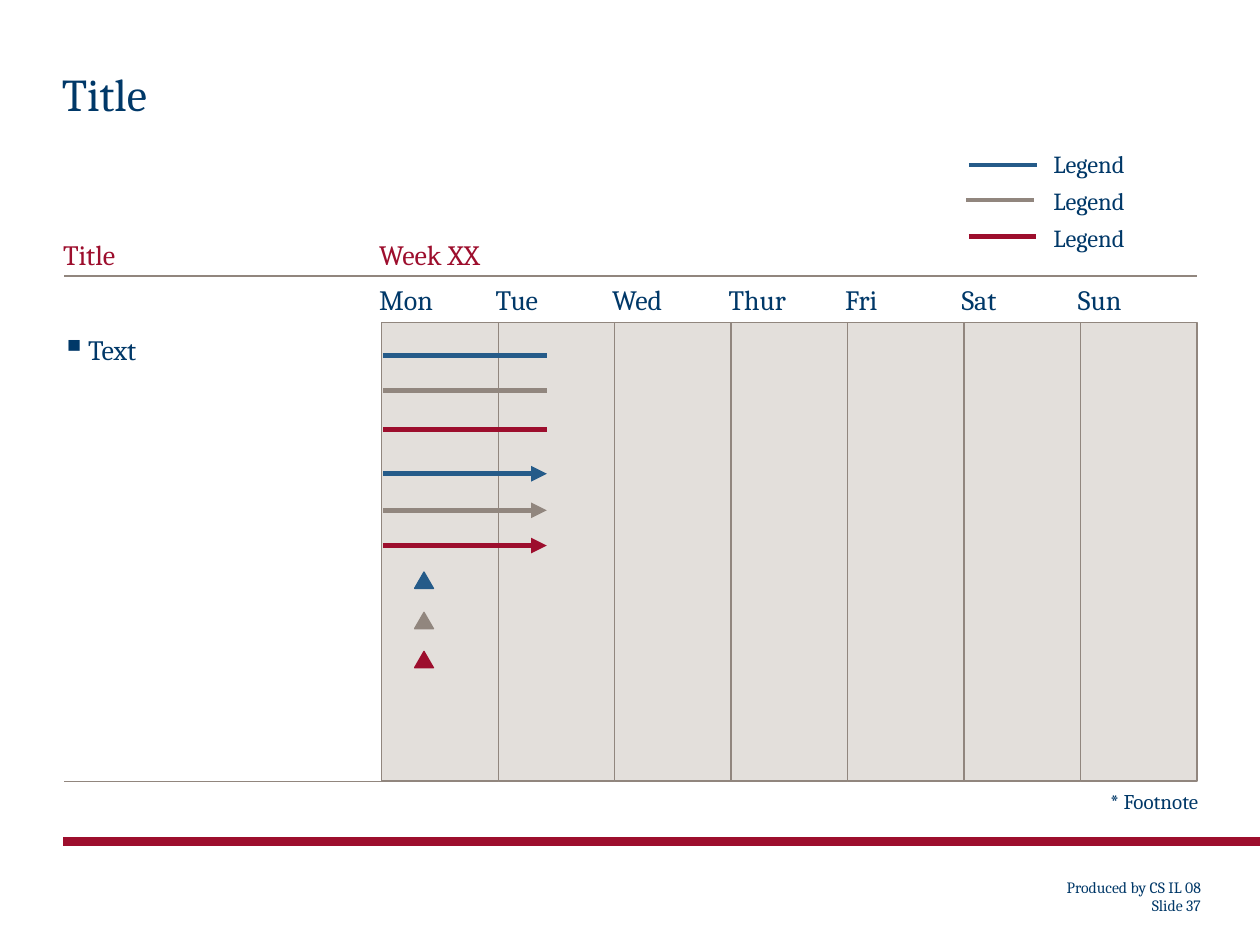
"""Build a weekly schedule slide with a legend, day columns and sample markers."""
from dataclasses import dataclass, field
from typing import Any

from lxml.etree import SubElement
from pptx import Presentation
from pptx.dml.color import RGBColor
from pptx.enum.shapes import MSO_CONNECTOR as Link, MSO_SHAPE as Preset
from pptx.enum.text import MSO_ANCHOR as Anchor, PP_ALIGN as Align
from pptx.oxml.ns import qn
from pptx.util import Inches, Pt

NAVY = RGBColor(0x00, 0x38, 0x68)
BLUE = RGBColor(0x25, 0x5B, 0x89)
TAUPE = RGBColor(0x91, 0x86, 0x7E)
CRIMSON = RGBColor(0x9D, 0x0E, 0x2D)
SAND = RGBColor(0xE3, 0xDF, 0xDB)

CELL = Inches(0.1)
COLUMNS, ROWS = 100, 75
LEFT, RIGHT = 5, 95
RULE, DAY_ROW, GRID_TOP, GRID_BOTTOM = 21.9, 22.4, 25.6, 62
GRID_LEFT = 30.3
DAYS = ("Mon", "Tue", "Wed", "Thur", "Fri", "Sat", "Sun")
DAY_STEP = (RIGHT - GRID_LEFT) / len(DAYS)
BAR_START, BAR_END = 30.4, 43.4


@dataclass
class Label:
    """Text lines with their place in grid cells and their format."""
    lines: tuple[str, ...]
    left: float
    top: float
    width: float
    height: float
    size: float = 16
    color: RGBColor = NAVY
    frame: dict[str, Any] = field(default_factory=dict)
    para: dict[str, Any] = field(default_factory=dict)
    bullet: str = ""


@dataclass
class Stroke:
    """A straight line between two points in grid cells."""
    left: float
    top: float
    right: float
    color: RGBColor
    weight: float
    arrow: bool = False


def cells(count: float) -> int:
    """Turn a number of grid cells into a length."""
    return round(count * CELL)


def apply(target: Any, values: dict[str, Any]) -> None:
    """Set every named attribute on the target."""
    for name, value in values.items():
        setattr(target, name, value)


def add_bullet(para: Any, sign: str) -> None:
    """Give the paragraph a hanging navy bullet."""
    props = para._p.get_or_add_pPr()
    props.set("marL", str(cells(2.1)))
    props.set("indent", str(cells(-2.1)))
    tint = SubElement(props, qn("a:buClr"))
    SubElement(tint, qn("a:srgbClr"), val=str(NAVY))
    SubElement(props, qn("a:buSzPct"), val="120000")
    SubElement(props, qn("a:buChar"), char=sign)


def draw_label(page: Any, label: Label) -> None:
    """Draw a text box."""
    box = page.shapes.add_textbox(cells(label.left), cells(label.top),
                                  cells(label.width), cells(label.height))
    margins = dict.fromkeys(
        ("margin_left", "margin_top", "margin_right", "margin_bottom"), 0)
    apply(box.text_frame, margins | {"word_wrap": True} | label.frame)
    for index, line in enumerate(label.lines):
        para = box.text_frame.add_paragraph() if index else box.text_frame.paragraphs[0]
        if label.bullet:
            add_bullet(para, label.bullet)
        apply(para, label.para)
        span = para.add_run()
        span.text = line
        apply(span.font, {"name": "Cambria", "size": Pt(label.size)})
        span.font.color.rgb = label.color


def draw_stroke(page: Any, stroke: Stroke) -> None:
    """Draw a level line, with an arrowhead when asked for."""
    line = page.shapes.add_connector(Link.STRAIGHT, cells(stroke.left), cells(stroke.top),
                                     cells(stroke.right), cells(stroke.top))
    line.line.color.rgb = stroke.color
    line.line.width = Pt(stroke.weight)
    if stroke.arrow:
        SubElement(line.line._get_or_add_ln(), qn("a:tailEnd"), type="triangle")
    SubElement(line._element.spPr, qn("a:effectLst"))


def draw_shape(page: Any, preset: Any, left: float, top: float, width: float,
               height: float, fill: RGBColor, edge: RGBColor) -> None:
    """Draw a filled preset shape with a thin edge."""
    shape = page.shapes.add_shape(preset, cells(left), cells(top), cells(width), cells(height))
    shape.shadow.inherit = False
    shape.fill.solid()
    shape.fill.fore_color.rgb = fill
    shape.line.color.rgb = edge
    shape.line.width = Pt(0.75)


def draw_week(page: Any) -> None:
    """Draw the day names above their columns."""
    for index, day in enumerate(DAYS):
        left = GRID_LEFT + index * DAY_STEP
        draw_label(page, Label((day,), left - 0.2, DAY_ROW, 8.7, 2.7))
        draw_shape(page, Preset.RECTANGLE, left, GRID_TOP, DAY_STEP,
                   GRID_BOTTOM - GRID_TOP, SAND, TAUPE)


def main() -> None:
    """Build and save the deck."""
    deck = Presentation()
    apply(deck, {"slide_width": COLUMNS * CELL, "slide_height": ROWS * CELL})
    page = deck.slides.add_slide(deck.slide_layouts[6])
    draw_week(page)

    low = {"vertical_anchor": Anchor.BOTTOM}
    pad = {"margin_top": cells(0.5)}
    labels = (
        Label(("Title",), 4.9, 5.8, 90.1, 3.4, 26, para={"line_spacing": Pt(27)}),
        Label(("Legend",) * 3, 83.6, 11.8, 11, 8.2, 14, para={"space_after": Pt(4.4)}),
        Label(("Title",), LEFT, 18.8, 24.1, 2.7, color=CRIMSON, frame=low),
        Label(("Week XX",), 30.1, 18.8, 47.2, 2.7, color=CRIMSON, frame=low),
        Label(("Text",), 4.9, 26, 24.3, 3.1, para={"line_spacing": Pt(22)}, bullet="▪"),
        Label(("* Footnote",), 86.7, 62.1, 8.4, 2.5, 12,
              frame=pad | {"margin_left": cells(1), "word_wrap": False},
              para={"alignment": Align.RIGHT}),
        Label(("Produced by CS IL 08", "Slide 37"), 76.1, 69.2, 19.2, 3.9, 9,
              frame=low | pad | {"margin_bottom": cells(0.5)},
              para={"alignment": Align.RIGHT, "line_spacing": 0.94}),
    )
    for label in labels:
        draw_label(page, label)

    strokes = [
        Stroke(LEFT, 66.8, COLUMNS, CRIMSON, 5),
        Stroke(LEFT + 0.1, RULE, RIGHT, TAUPE, 1),
        Stroke(LEFT + 0.1, GRID_BOTTOM, 30.6, TAUPE, 0.75),
        Stroke(76.9, 13.1, 82.3, BLUE, 2.25),
        Stroke(76.7, 15.9, 82.1, TAUPE, 2.25),
        Stroke(76.9, 18.8, 82.2, CRIMSON, 3),
    ]
    series = zip((BLUE, TAUPE, CRIMSON), (28.2, 31, 34.1), (37.6, 40.5, 43.3),
                 (45.4, 48.6, 51.7))
    for color, bar_row, arrow_row, marker_row in series:
        strokes.append(Stroke(BAR_START, bar_row, BAR_END, color, 3))
        strokes.append(Stroke(BAR_START, arrow_row, BAR_END, color, 3, True))
        draw_shape(page, Preset.ISOSCELES_TRIANGLE, 32.9, marker_row, 1.5, 1.3, color, color)
    for stroke in strokes:
        draw_stroke(page, stroke)

    deck.save("out.pptx")


if __name__ == "__main__":
    main()
